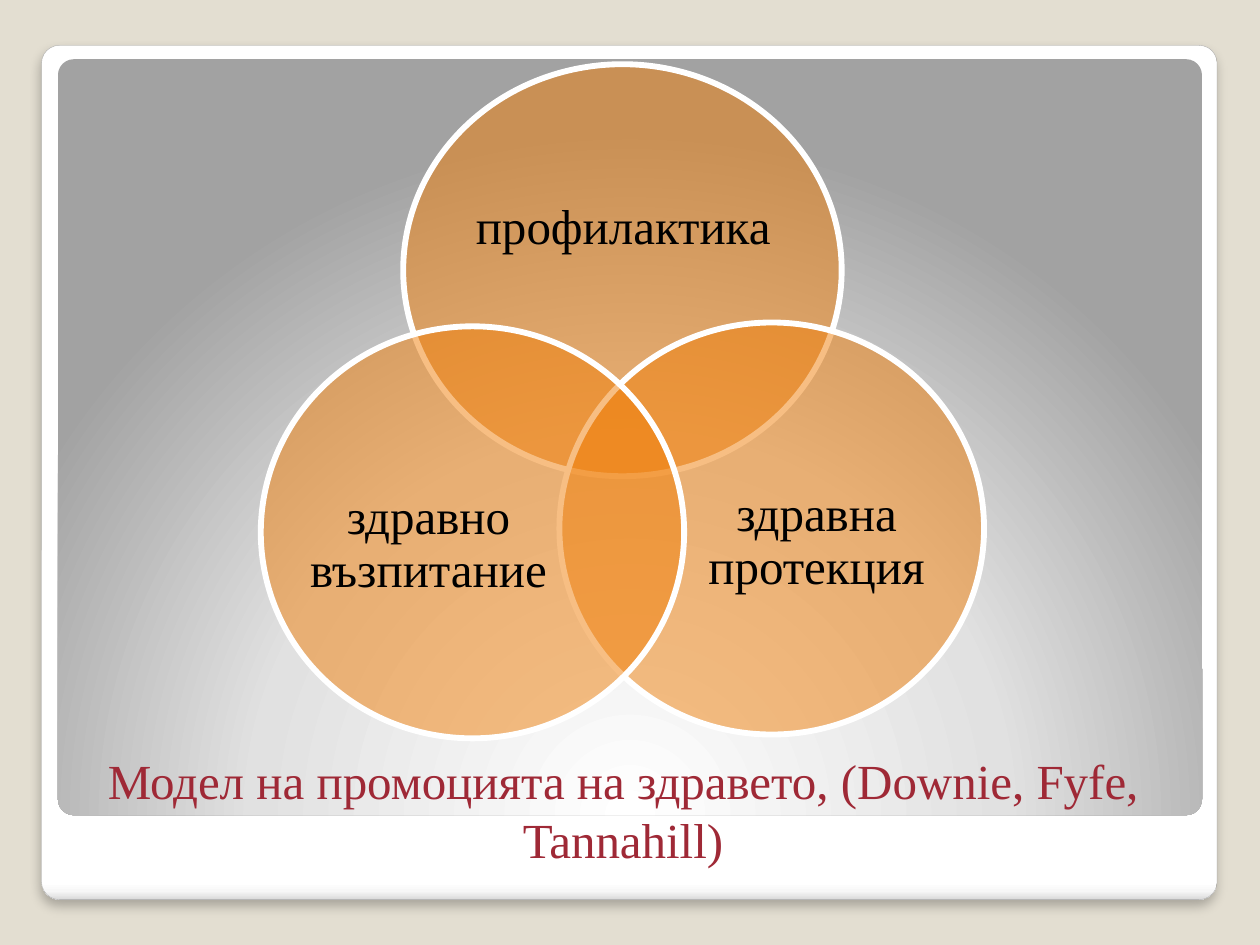
from dataclasses import dataclass
from lxml.etree import SubElement
from pptx import Presentation
from pptx.dml.color import RGBColor
from pptx.enum.shapes import MSO_SHAPE
from pptx.enum.text import MSO_ANCHOR, PP_ALIGN
from pptx.oxml.ns import qn
from pptx.util import Inches, Pt


@dataclass(frozen=True)
class Theme:
    back: str = "E3DED1"
    edge: str = "A4A4A4"
    white: str = "FFFFFF"
    ring: str = "F07F09"
    title: str = "9F2936"
    ink: str = "000000"
    shade: str = "000000"
    card: tuple = ((0, "FFFFFF"), (98, "FFFFFF"), (99, "F7F7F7"), (100, "DADADA"))
    panel: tuple = ((0, "FFFFFF"), (55, "E1E1E1"), (100, "A2A2A2"))
    font: str = "Times New Roman"
    size: int = 28


THEME = Theme()


def color(code):
    return RGBColor.from_string(code)


def node(parent, tag, **attrs):
    return SubElement(parent, qn(tag), {k: str(v) for k, v in attrs.items()})


def add_form(slide, kind, box):
    shape = slide.shapes.add_shape(kind, *map(Inches, box))
    shape.shadow.inherit = False
    return shape


def add_grad(shape, stops):
    shape.fill.gradient()
    grad = shape._element.spPr.find(qn("a:gradFill"))
    for child in list(grad):
        grad.remove(child)
    items = node(grad, "a:gsLst")
    for place, code in stops:
        stop = node(items, "a:gs", pos=place * 1000)
        node(stop, "a:srgbClr", val=code)
    return grad


def add_text(slide, box, words, tint, anchor, inset=0.0):
    frame = slide.shapes.add_textbox(*map(Inches, box)).text_frame
    frame.word_wrap = True
    frame.vertical_anchor = anchor
    frame.margin_left = frame.margin_right = Inches(inset)
    frame.margin_top = frame.margin_bottom = Inches(inset / 2)
    para = frame.paragraphs[0]
    para.text = words
    para.alignment = PP_ALIGN.CENTER
    para.font.name = THEME.font
    para.font.size = Pt(THEME.size)
    para.font.color.rgb = color(tint)
    return para


def draw_frame(slide, box):
    left, top, width, height = box
    card = add_form(slide, MSO_SHAPE.ROUNDED_RECTANGLE, box)
    card.adjustments[0] = 0.021
    grad = add_grad(card, THEME.card)
    node(grad, "a:lin", ang=90 * 60000, scaled=0)
    card.line.color.rgb = color(THEME.edge)
    card.line.width = Pt(0.16)
    effect = card._element.spPr.find(qn("a:effectLst"))
    shadow = node(effect, "a:outerShdw", blurRad=Pt(6), dist=Pt(4),
                  dir=90 * 60000, algn="t", rotWithShape=0)
    shade = node(shadow, "a:srgbClr", val=THEME.shade)
    node(shade, "a:alpha", val=25000)

    inner = (left + 0.13, top + 0.11, width - 0.25, height - 0.78)
    panel = add_form(slide, MSO_SHAPE.ROUNDED_RECTANGLE, inner)
    panel.adjustments[0] = 0.021
    grad = add_grad(panel, THEME.panel)
    focus = node(grad, "a:path", path="circle")
    node(focus, "a:fillToRect", l=50000, t=175000, r=50000, b=-75000)
    panel.line.fill.background()


def draw_ring(slide, box, label, words):
    left, top, width, height = box
    ring = add_form(slide, MSO_SHAPE.OVAL, box)
    ring.fill.solid()
    ring.fill.fore_color.rgb = color(THEME.ring)
    tint = ring._element.spPr.find(qn("a:solidFill"))[0]
    node(tint, "a:alpha", val=50000)
    ring.line.color.rgb = color(THEME.white)
    ring.line.width = Pt(3.35)
    x, y, wide, high = label
    area = (left + x, top + y, wide, high)
    para = add_text(slide, area, words, THEME.ink, MSO_ANCHOR.MIDDLE)
    para.line_spacing = 0.9
    para.space_after = Pt(0.35 * THEME.size)


def draw_venn(slide, box):
    left, top = box[:2]
    rings = (
        (1.13, 0, 3.48, (0.47, 0.57, 2.55, 1.47), "профилактика"),
        (2.37, 2.05, 3.37, (1.03, 0.84, 2.02, 1.8), "здравна протекция"),
        (0, 2.08, 3.36, (0.32, 0.84, 2.02, 1.8), "здравно възпитание"),
    )
    for x, y, width, label, words in rings:
        draw_ring(slide, (left + x, top + y, width, 3.27), label, words)


def draw_title(slide, box):
    words = "Модел на промоцията на здравето, (Downie, Fyfe, Tannahill)"
    add_text(slide, box, words, THEME.title, MSO_ANCHOR.BOTTOM, 0.1)


def main():
    deck = Presentation()
    deck.slide_width, deck.slide_height = Inches(10), Inches(7.5)
    slide = deck.slides.add_slide(deck.slide_layouts[6])
    slide.background.fill.solid()
    slide.background.fill.fore_color.rgb = color(THEME.back)
    draw_frame(slide, (0.33, 0.36, 9.33, 6.78))
    draw_title(slide, (0.47, 5.84, 8.95, 1.1))
    draw_venn(slide, (2.07, 0.51, 5.74, 5.35))
    deck.save("out.pptx")


if __name__ == "__main__":
    main()
